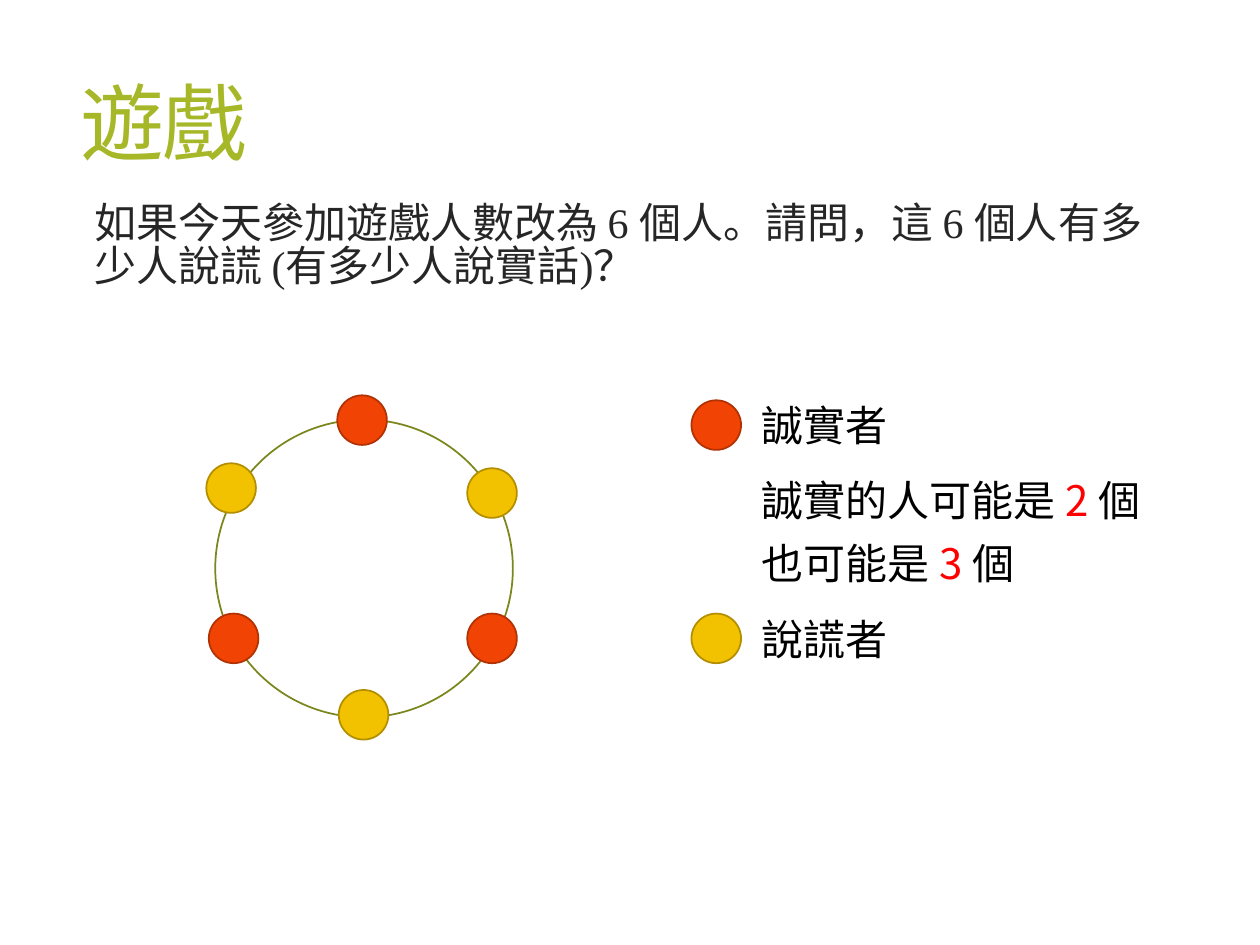
"""Build the slide about a game of truth tellers and liars."""
import dataclasses

import pptx
import pptx.dml.color
import pptx.enum.shapes
import pptx.enum.text
import pptx.util

Cm = pptx.util.Cm
Pt = pptx.util.Pt
SERIF = "Times New Roman"
SANS = "Noto Sans CJK SC"
DOT = 1.0
LEFT = 15.11


@dataclasses.dataclass
class Role:
    fill: str
    line: str


@dataclasses.dataclass
class Dot:
    x: float
    y: float
    role: Role


@dataclasses.dataclass
class Label:
    top: float
    width: float
    words: list[tuple[str, str]]


BLACK, RED = "000000", "FF0000"
HONEST = Role("F04304", "B23203")
LIAR = Role("F2C100", "B38F00")
DOTS = [
    Dot(7.3, 8.47, HONEST),
    Dot(4.66, 9.84, LIAR),
    Dot(9.92, 9.94, LIAR),
    Dot(4.71, 12.87, HONEST),
    Dot(9.92, 12.87, HONEST),
    Dot(7.33, 14.41, LIAR),
    Dot(14.44, 8.57, HONEST),
    Dot(14.44, 12.87, LIAR),
]
LABELS = [
    Label(7.92, 3.07, [("誠實者", BLACK)]),
    Label(9.45, 8.64, [("誠實的人可能是 ", BLACK), ("2 ", RED), ("個", BLACK)]),
    Label(10.72, 6.07, [("也可能是 ", BLACK), ("3 ", RED), ("個", BLACK)]),
    Label(12.24, 3.07, [("說謊者", BLACK)]),
]


def paint(color, code: str) -> None:
    """Set a colour from its hex string."""
    color.rgb = pptx.dml.color.RGBColor.from_string(code)


def style(para, name: str, size: float) -> None:
    """Set the font of a paragraph."""
    para.font.name = name
    para.font.size = Pt(size)


def circle(slide, x: float, y: float, size: float, line: str, fill: str = "") -> None:
    """Draw a circle around a centre point."""
    shape = slide.shapes.add_shape(
        pptx.enum.shapes.MSO_SHAPE.OVAL,
        Cm(x - size / 2), Cm(y - size / 2), Cm(size), Cm(size))
    shape.shadow.inherit = False
    if fill:
        shape.fill.solid()
        paint(shape.fill.fore_color, fill)
    else:
        shape.fill.background()
    paint(shape.line.color, line)
    shape.line.width = Pt(1)


def write(slide, label: Label) -> None:
    """Write one line of the legend."""
    box = slide.shapes.add_textbox(
        Cm(LEFT), Cm(label.top), Cm(label.width), Cm(1.27))
    box.text_frame.word_wrap = False
    para = box.text_frame.paragraphs[0]
    style(para, SANS, 24)
    for text, code in label.words:
        run = para.add_run()
        run.text = text
        paint(run.font.color, code)


def head(slide) -> None:
    """Fill and place the title."""
    title = slide.shapes.title
    title.left, title.top = Cm(1.37), Cm(1.4)
    title.width, title.height = Cm(22.45), Cm(2.34)
    frame = title.text_frame
    frame.text = "遊戲"
    frame.vertical_anchor = pptx.enum.text.MSO_ANCHOR.MIDDLE
    para = frame.paragraphs[0]
    para.alignment = pptx.enum.text.PP_ALIGN.LEFT
    para.line_spacing = 0.9
    style(para, SERIF, 48)
    paint(para.font.color, "A6B727")
    para.runs[0].font._element.set("spc", "-120")


def ask(slide) -> None:
    """Write the question below the title."""
    box = slide.shapes.add_textbox(Cm(1.4), Cm(3.99), Cm(22.4), Cm(3.33))
    frame = box.text_frame
    frame.word_wrap = True
    frame.text = "如果今天參加遊戲人數改為 6 個人。請問，這 6 個人有多少人說謊 (有多少人說實話)？"
    para = frame.paragraphs[0]
    para.line_spacing = 0.85
    para.space_before = Pt(13)
    style(para, SERIF, 24)
    paint(para.font.color, "262626")
    para._p.get_or_add_pPr().set("marL", str(int(Cm(0.25))))


def main() -> None:
    """Build and save the slide."""
    deck = pptx.Presentation()
    deck.slide_width, deck.slide_height = Cm(25.4), Cm(19.05)
    slide = deck.slides.add_slide(deck.slide_layouts[5])
    head(slide)
    ask(slide)
    circle(slide, 7.34, 11.46, 6, "7B871D")
    for dot in DOTS:
        circle(slide, dot.x, dot.y, DOT, dot.role.line, dot.role.fill)
    for label in LABELS:
        write(slide, label)
    deck.save("out.pptx")


if __name__ == "__main__":
    main()
